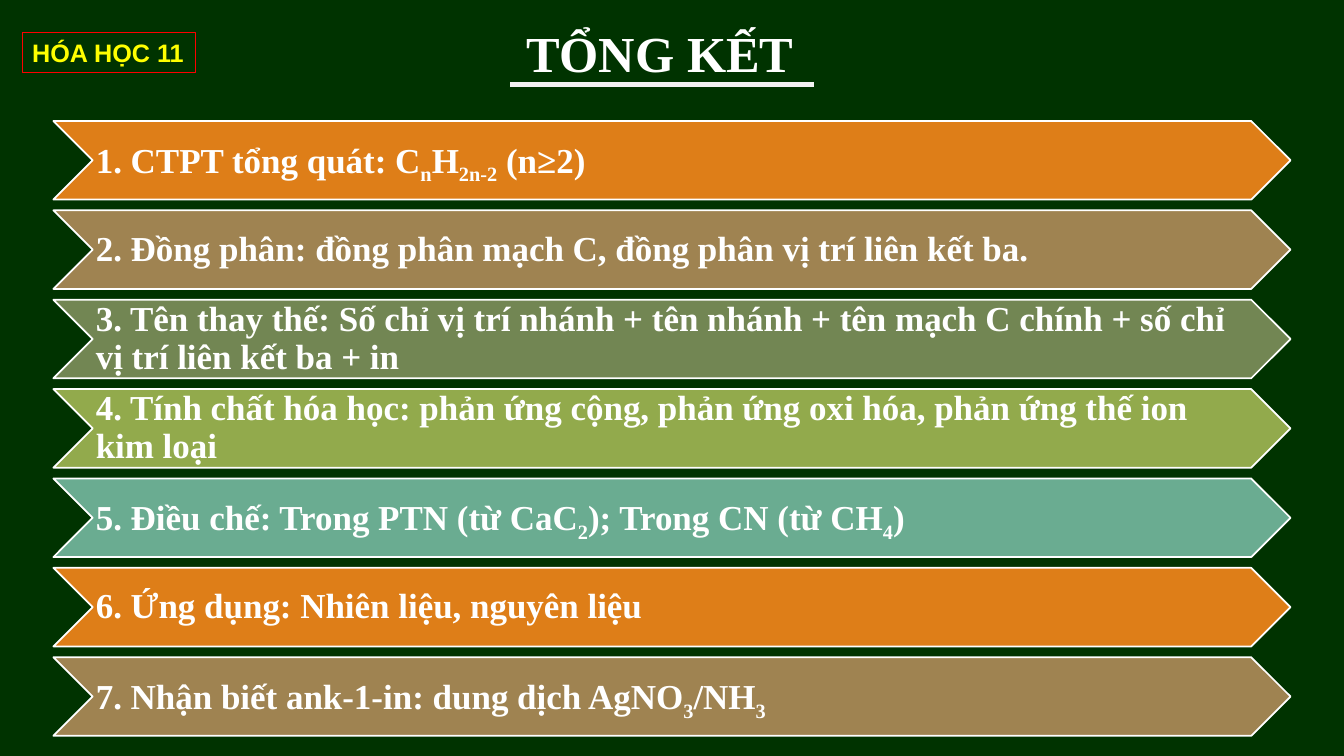
from pptx import Presentation
from pptx.dml.color import RGBColor
from pptx.enum.shapes import MSO_CONNECTOR as CONN, MSO_SHAPE as SHAPE
from pptx.enum.text import MSO_ANCHOR as ANCHOR, MSO_AUTO_SIZE as AUTO
from pptx.oxml.ns import qn
from pptx.util import Inches, Pt
from lxml import etree

WIDTH, HEIGHT = 13.33, 7.5
SERIF = "Times New Roman"
BAND_LEFT, BAND_TOP, BAND_WIDTH, BAND_HEIGHT = 0.53, 1.2, 12.27, 0.78
BAND_COUNT = 7
BAND_PITCH = (6.52 - BAND_TOP) / (BAND_COUNT - 1)
BAND_COLORS = ["DE7E18", "9F8351", "728653", "92AA4C", "6AAC91"]

# Every second piece between bars is a subscript.
SUMMARY = [
    "1. CTPT tổng quát: C|n|H|2n-2| (n≥2)",
    "2. Đồng phân: đồng phân mạch C, đồng phân vị trí liên kết ba.",
    "3. Tên thay thế: Số chỉ vị trí nhánh + tên nhánh + tên mạch C chính"
    " + số chỉ vị trí liên kết ba + in",
    "4. Tính chất hóa học: phản ứng cộng, phản ứng oxi hóa,"
    " phản ứng thế ion kim loại",
    "5. Điều chế: Trong PTN (từ CaC|2|); Trong CN (từ CH|4|)",
    "6. Ứng dụng: Nhiên liệu, nguyên liệu",
    "7. Nhận biết ank-1-in: dung dịch AgNO|3|/NH|3",
]


def color(value):
    return RGBColor.from_string(value)


def box(*lengths):
    return [Inches(n) for n in lengths]


def set_line(line, value, width):
    line.color.rgb = color(value)
    line.width = Pt(width)


def add_runs(p, text, size, font=SERIF, fill="FFFFFF"):
    """Fill a paragraph with bold runs, lowering every second piece."""
    for i, piece in enumerate(text.split("|")):
        if not piece:
            continue
        r = p.add_run()
        r.text = piece
        for name, value in dict(size=Pt(size), name=font, bold=True).items():
            setattr(r.font, name, value)
        r.font.color.rgb = color(fill)
        if i % 2:
            r._r.get_or_add_rPr().set("baseline", "-25000")


def add_label(shapes, bounds, text, size, **style):
    """Add a one-line text box that grows with its text."""
    sp = shapes.add_textbox(*box(*bounds))
    sp.text_frame.word_wrap = False
    sp.text_frame.auto_size = AUTO.SHAPE_TO_FIT_TEXT
    add_runs(sp.text_frame.paragraphs[0], text, size, **style)
    return sp


def add_band(shapes, row, text):
    top = BAND_TOP + row * BAND_PITCH
    sp = shapes.add_shape(
        SHAPE.CHEVRON, *box(BAND_LEFT, top, BAND_WIDTH, BAND_HEIGHT))
    sp.shadow.inherit = False
    sp.fill.solid()
    sp.fill.fore_color.rgb = color(BAND_COLORS[row % len(BAND_COLORS)])
    set_line(sp.line, "FFFFFF", 1.25)

    notch = BAND_HEIGHT / 2
    tb = shapes.add_textbox(*box(
        BAND_LEFT + notch, top, BAND_WIDTH - 2 * notch, BAND_HEIGHT))
    tf = tb.text_frame
    layout = dict(word_wrap=True, vertical_anchor=ANCHOR.MIDDLE,
                  margin_left=Inches(0.03), margin_right=0,
                  margin_top=Inches(0.02), margin_bottom=Inches(0.02))
    for name, value in layout.items():
        setattr(tf, name, value)
    p = tf.paragraphs[0]
    p.line_spacing = 0.9
    add_runs(p, text, 25)


def add_rule(shapes, left, right, y):
    line = shapes.add_connector(CONN.STRAIGHT, *box(left, y, right, y))
    set_line(line.line, "F2F2F2", 3.5)
    etree.SubElement(line._element.spPr, qn("a:effectLst"))


def main():
    prs = Presentation()
    prs.slide_width, prs.slide_height = box(WIDTH, HEIGHT)
    s = prs.slides.add_slide(prs.slide_layouts[6])
    s.background.fill.solid()
    s.background.fill.fore_color.rgb = color("003300")

    bands = s.shapes.add_group_shape()
    for row, text in enumerate(SUMMARY):
        add_band(bands.shapes, row, text)

    subject = add_label(s.shapes, (0.22, 0.32, 1.72, 0.4), "HÓA HỌC 11", 18,
                        font="Arial", fill="FFFF00")
    set_line(subject.line, "FF0000", 0.75)
    add_label(s.shapes, (5.12, 0.17, 2.88, 0.71), "TỔNG KẾT", 36)
    add_rule(s.shapes, 5.06, 8.07, 0.84)
    prs.save("out.pptx")


if __name__ == "__main__":
    main()
